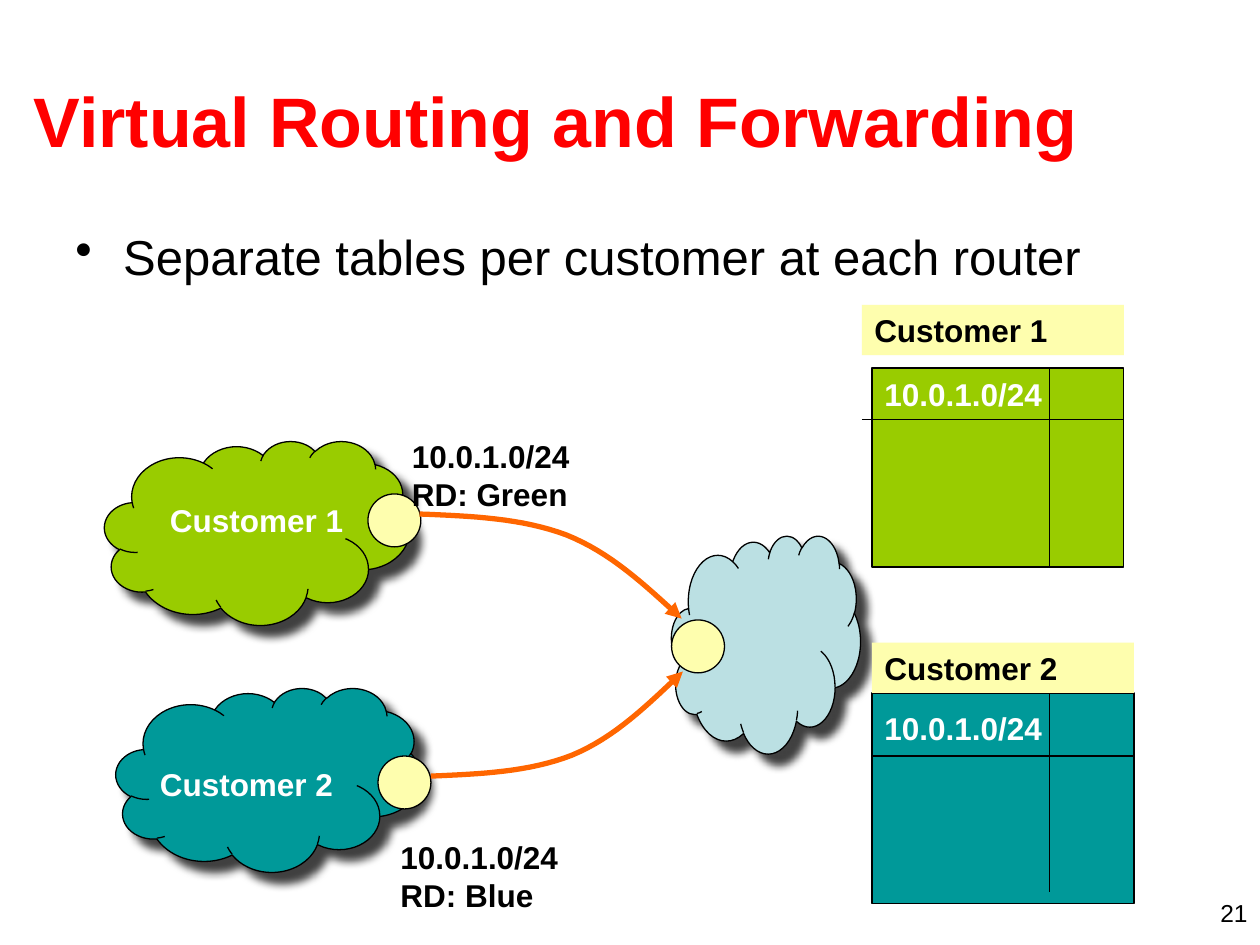
import dataclasses
import pptx
import pptx.dml.color
import pptx.enum.shapes
import pptx.enum.text
import pptx.oxml
import pptx.oxml.ns
import pptx.util

Inches = pptx.util.Inches
Pt = pptx.util.Pt
Shape = pptx.enum.shapes.MSO_SHAPE
Align = pptx.enum.text.PP_ALIGN
Anchor = pptx.enum.text.MSO_ANCHOR


@dataclasses.dataclass(frozen=True)
class Theme:
    font: str = "Arial"
    black: str = "000000"
    white: str = "FFFFFF"
    red: str = "FF0000"
    green: str = "99CC00"
    teal: str = "009999"
    sky: str = "BBE0E3"
    cream: str = "FEFEAE"
    orange: str = "FF6600"
    title: int = 40
    body: int = 28
    label: int = 18
    page: int = 14
    thin: float = 0.75
    thick: float = 3


THEME = Theme()
BEND = [(0, 0), (0.2, 0.02), (0.39, 0.04), (0.56, 0.2), (0.73, 0.37), (0.86, 0.68), (1, 1)]
STEPS = 16


def hue(code):
    return pptx.dml.color.RGBColor.from_string(code)


def place(box):
    return [Inches(n) for n in box]


def add_xml(parent, tag, body):
    space = pptx.oxml.ns.nsdecls("a")
    parent.append(pptx.oxml.parse_xml(f"<a:{tag} {space}{body}"))


def write(shape, text, size, color, bold=False, align=Align.LEFT, anchor=Anchor.TOP):
    frame = shape.text_frame
    frame.word_wrap = True
    frame.vertical_anchor = anchor
    para = frame.paragraphs[0]
    para.text = text
    para.alignment = align
    para.font.name = THEME.font
    para.font.size = Pt(size)
    para.font.bold = bold
    para.font.color.rgb = hue(color)
    return para


def add_text(slide, box, *args, **style):
    return write(slide.shapes.add_textbox(*place(box)), *args, **style)


def add_label(slide, box, text, color):
    add_text(slide, box, text, THEME.label, color, bold=True)


def add_form(slide, kind, box, fill, edge=True):
    shape = slide.shapes.add_shape(kind, *place(box))
    shape.shadow.inherit = False
    shape.fill.solid()
    shape.fill.fore_color.rgb = hue(fill)
    if edge:
        shape.line.color.rgb = hue(THEME.black)
        shape.line.width = Pt(THEME.thin)
    else:
        shape.line.fill.background()
    return shape


def add_line(slide, *ends):
    kind = pptx.enum.shapes.MSO_CONNECTOR.STRAIGHT
    line = slide.shapes.add_connector(kind, *place(ends))
    line.line.color.rgb = hue(THEME.black)
    line.line.width = Pt(THEME.thin)
    add_xml(line._element.spPr, "effectLst", "/>")


def add_head(slide, box):
    left, top, width, height = box
    add_text(slide, (left, top, width, 1.25), "Virtual Routing and Forwarding",
             THEME.title, THEME.red, bold=True, anchor=Anchor.MIDDLE)
    para = add_text(slide, (left + 0.33, top + 1.43, 9, height - 1.43),
                    "Separate tables per customer at each router", THEME.body, THEME.black)
    props = para._p.get_or_add_pPr()
    props.set("marL", str(Inches(0.38)))
    props.set("indent", str(-Inches(0.38)))
    add_xml(props, "buChar", ' char="•"/>')


def add_cloud(slide, box, fill, dot):
    left, top, width, height = box
    cloud = add_form(slide, Shape.CLOUD, box, fill)
    add_xml(cloud._element.spPr.find(pptx.oxml.ns.qn("a:effectLst")), "outerShdw",
            f' blurRad="{Pt(5)}" dist="{Pt(8.5)}" dir="2700000" algn="ctr" rotWithShape="0">'
            f'<a:srgbClr val="{THEME.black}"><a:alpha val="75000"/></a:srgbClr></a:outerShdw>')
    add_form(slide, Shape.OVAL, (left + dot[0], top + dot[1], 0.42, 0.42), THEME.cream)


def add_site(slide, box, fill, dot, name, spot, route, note):
    left, top, width, height = box
    add_cloud(slide, box, fill, dot)
    add_label(slide, (left + spot[0], top + spot[1], 1.58, 0.4), name, THEME.white)
    add_label(slide, (left + note[0], top + note[1], 1.75, 0.7), route, THEME.black)


def bezier(a, b, c, d, t):
    u = 1 - t
    return tuple(u**3 * i + 3 * u * u * t * j + 3 * u * t * t * k + t**3 * m
                 for i, j, k, m in zip(a, b, c, d))


def add_curve(slide, box, rise=False):
    left, top, width, height = box
    dots = [BEND[0]] + [bezier(*BEND[n:n + 4], step / STEPS)
                        for n in (0, 3) for step in range(1, STEPS + 1)]
    marks = [(Inches(left + width * x), Inches(top + height * (1 - y if rise else y)))
             for x, y in dots]
    pen = slide.shapes.build_freeform(*marks[0])
    pen.add_line_segments(marks[1:], close=False)
    curve = pen.convert_to_shape()
    curve.shadow.inherit = False
    curve.fill.background()
    curve.line.color.rgb = hue(THEME.orange)
    curve.line.width = Pt(THEME.thick)
    add_xml(curve.line._get_or_add_ln(), "tailEnd", ' type="triangle"/>')


def add_panel(slide, box, fill, name, shift, row, pad):
    left, top, width, height = box
    start = left + shift[0]
    add_form(slide, Shape.RECTANGLE, box, fill)
    add_line(slide, start, top + row, left + width, top + row)
    add_line(slide, left + 1.41, top, left + 1.41, top + 1.58)
    add_label(slide, (left, top + pad, 1.5, 0.4), "10.0.1.0/24", THEME.white)
    tab = add_form(slide, Shape.RECTANGLE, (start, top + shift[1], 2.08, 0.4),
                   THEME.cream, edge=False)
    write(tab, name, THEME.label, THEME.black, bold=True)


def main():
    deck = pptx.Presentation()
    deck.slide_width, deck.slide_height = Inches(10), Inches(7.5)
    slide = deck.slides.add_slide(deck.slide_layouts[6])
    add_head(slide, (0.17, 0.32, 9.58, 2.1))
    add_cloud(slide, (5.33, 4.25, 1.5, 1.73), THEME.sky, (0, 0.67))
    add_site(slide, (0.83, 3.5, 2.42, 1.46), THEME.green, (2.09, 0.42),
             "Customer 1", (0.42, 0.43), "10.0.1.0/24\nRD: Green", (2.34, -0.08))
    add_site(slide, (0.92, 5.46, 2.42, 1.46), THEME.teal, (2.08, 0.54),
             "Customer 2", (0.25, 0.56), "10.0.1.0/24\nRD: Blue", (2.16, 1.14))
    add_curve(slide, (3.33, 4.08, 2.08, 0.83))
    add_curve(slide, (3.42, 5.33, 2, 0.83), rise=True)
    add_panel(slide, (6.92, 2.92, 2, 1.58), THEME.green, "Customer 1", (-0.08, -0.5), 0.41, 0.01)
    add_panel(slide, (6.92, 5.5, 2.08, 1.67), THEME.teal, "Customer 2", (0, -0.4), 0.5, 0.08)
    add_text(slide, (7.67, 7.08, 2.33, 0.25), "21", THEME.page, THEME.black, align=Align.RIGHT)
    deck.save("out.pptx")


if __name__ == "__main__":
    main()
